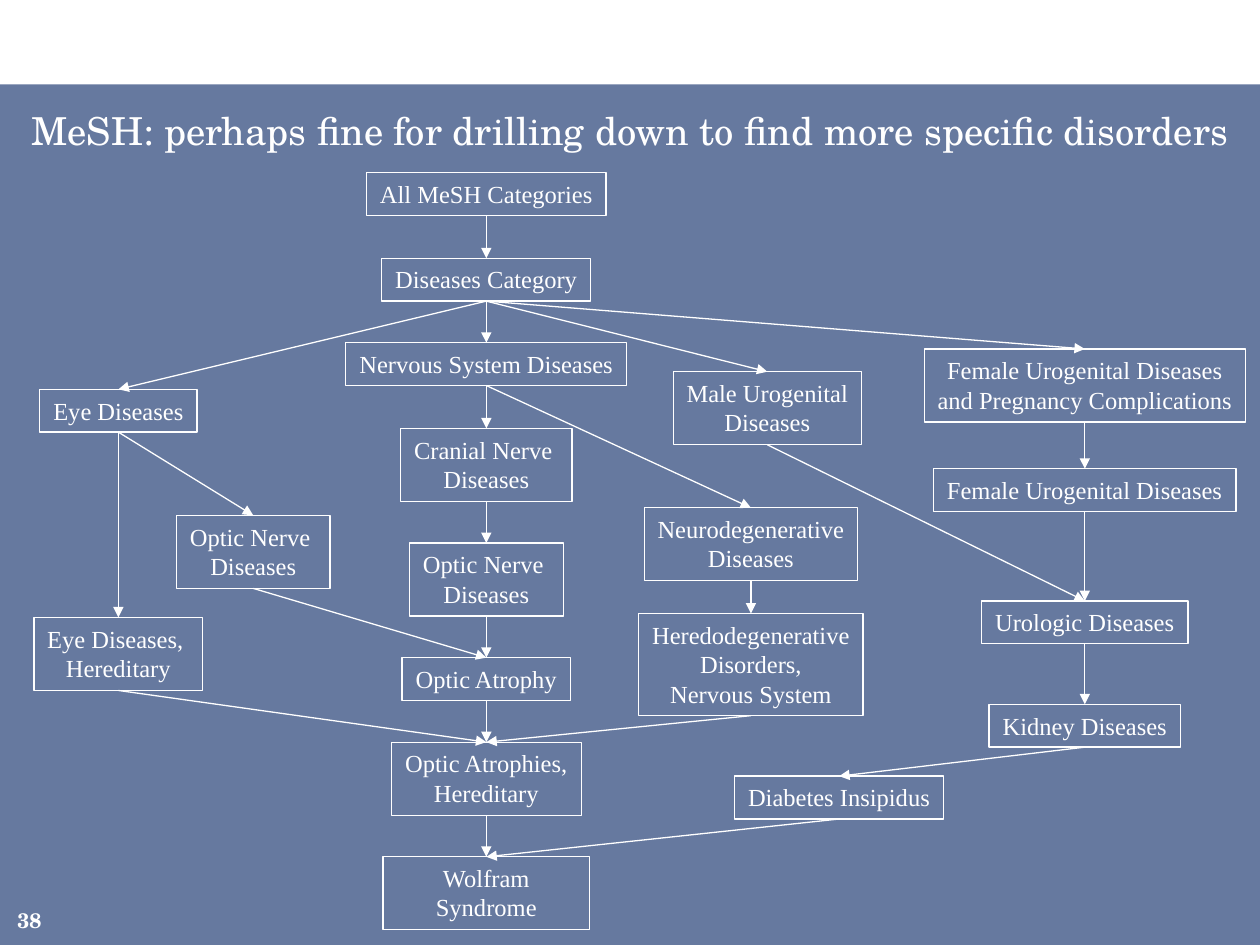
from lxml import etree
from pptx import Presentation
from pptx.dml.color import RGBColor
from pptx.enum import shapes, text
from pptx.oxml import ns
from pptx.util import Inches, Pt

WHITE = RGBColor(0xFF, 0xFF, 0xFF)
NAVY = RGBColor(0x00, 0x20, 0x60)
HEADING_FONT = "TeX Gyre Schola"
TERM_FONT = "Times New Roman"
HEIGHTS = {1: 0.34, 2: 0.58, 3: 0.81}
LEFT, OPTIC, SPINE, NEURO, MALE, INSIPIDUS, RIGHT = 0.94, 2.01, 3.86, 5.96, 6.09, 6.66, 8.61


def style(paragraph, font_name, size, align):
    paragraph.alignment = align
    paragraph.font.name = font_name
    paragraph.font.size = Pt(size)
    paragraph.font.color.rgb = WHITE


def add_child(parent, tag, **attributes):
    return etree.SubElement(parent, ns.qn(tag), attributes)


prs = Presentation()
prs.slide_width, prs.slide_height = Inches(10), Inches(7.5)
slide = prs.slides.add_slide(prs.slide_layouts[5])

backdrop = slide.shapes.add_shape(
    shapes.MSO_SHAPE.RECTANGLE, Inches(0), Inches(0.67), Inches(10), Inches(6.83))
backdrop.shadow.inherit = False
backdrop.fill.solid()
backdrop.fill.fore_color.rgb = NAVY
backdrop.line.fill.background()
add_child(backdrop._element.spPr.find(".//" + ns.qn("a:srgbClr")), "a:alpha", val="60000")
slide.shapes._spTree.insert(2, backdrop._element)

heading = slide.shapes.title
heading.left, heading.top = Inches(0), Inches(0.72)
heading.width, heading.height = Inches(10), Inches(0.62)
heading.text_frame.text = "MeSH: perhaps fine for drilling down to find more specific disorders"
heading.text_frame.auto_size = text.MSO_AUTO_SIZE.NONE
heading.text_frame.vertical_anchor = text.MSO_ANCHOR.MIDDLE
style(heading.text_frame.paragraphs[0], HEADING_FONT, 22, text.PP_ALIGN.CENTER)

# key: centre, top, width, lines
terms = {
    "all": (SPINE, 1.37, 1.9, ["All MeSH Categories"]),
    "diseases": (SPINE, 2.05, 1.66, ["Diseases Category"]),
    "nervous": (SPINE, 2.72, 2.23, ["Nervous System Diseases"]),
    "cranial": (SPINE, 3.4, 1.36, ["Cranial Nerve ", "Diseases"]),
    "cranial optic": (SPINE, 4.31, 1.22, ["Optic Nerve ", "Diseases"]),
    "atrophy": (SPINE, 5.22, 1.34, ["Optic Atrophy"]),
    "atrophies": (SPINE, 5.89, 1.51, ["Optic Atrophies,", "Hereditary"]),
    "wolfram": (SPINE, 6.8, 1.64, ["Wolfram Syndrome"]),
    "neuro": (NEURO, 4.03, 1.69, ["Neurodegenerative", "Diseases"]),
    "heredo": (NEURO, 4.87, 1.78, ["Heredodegenerative", "Disorders,", "Nervous System"]),
    "eye": (LEFT, 3.09, 1.25, ["Eye Diseases"]),
    "eye hereditary": (LEFT, 4.9, 1.34, ["Eye Diseases, ", "Hereditary"]),
    "eye optic": (OPTIC, 4.09, 1.22, ["Optic Nerve ", "Diseases"]),
    "male": (MALE, 2.95, 1.49, ["Male Urogenital", "Diseases"]),
    "pregnancy": (RIGHT, 2.77, 2.55,
                  ["Female Urogenital Diseases", "and Pregnancy Complications"]),
    "female": (RIGHT, 3.72, 2.4, ["Female Urogenital Diseases"]),
    "urologic": (RIGHT, 4.77, 1.64, ["Urologic Diseases"]),
    "kidney": (RIGHT, 5.59, 1.52, ["Kidney Diseases"]),
    "insipidus": (INSIPIDUS, 6.16, 1.66, ["Diabetes Insipidus"]),
}
nodes = {}
for key, (centre, top, width, lines) in terms.items():
    wraps = key == "wolfram"
    height = HEIGHTS[2 if wraps else len(lines)]
    node = slide.shapes.add_textbox(
        Inches(centre - width / 2), Inches(top), Inches(width), Inches(height))
    node.line.color.rgb = WHITE
    node.line.width = Pt(0.75)
    frame = node.text_frame
    frame.text = "\n".join(lines)
    frame.word_wrap = wraps
    frame.auto_size = text.MSO_AUTO_SIZE.SHAPE_TO_FIT_TEXT
    for paragraph in frame.paragraphs:
        style(paragraph, TERM_FONT, 14, text.PP_ALIGN.CENTER)
    nodes[key] = node

paths = [
    ["all", "diseases", "nervous", "cranial", "cranial optic", "atrophy", "atrophies", "wolfram"],
    ["nervous", "neuro", "heredo", "atrophies"],
    ["diseases", "eye", "eye hereditary", "atrophies"],
    ["eye", "eye optic", "atrophy"],
    ["diseases", "male", "urologic", "kidney", "insipidus", "wolfram"],
    ["diseases", "pregnancy", "female", "urologic"],
]
BOTTOM_SITE, TOP_SITE = 2, 0
for chain in paths:
    for broader, narrower in zip(chain, chain[1:]):
        arrow = slide.shapes.add_connector(shapes.MSO_CONNECTOR.STRAIGHT, 0, 0, 0, 0)
        arrow.begin_connect(nodes[broader], BOTTOM_SITE)
        arrow.end_connect(nodes[narrower], TOP_SITE)
        arrow.line.color.rgb = WHITE
        arrow.line.width = Pt(0.75)
        add_child(arrow.line._get_or_add_ln(), "a:tailEnd", type="triangle")
        add_child(arrow._element.spPr, "a:effectLst")

page_number = slide.shapes.add_textbox(Inches(0), Inches(7.08), Inches(0.33), Inches(0.32))
frame = page_number.text_frame
frame.margin_left = frame.margin_right = frame.margin_top = frame.margin_bottom = 0
frame.word_wrap = True
frame.vertical_anchor = text.MSO_ANCHOR.BOTTOM
frame.text = "38"
style(frame.paragraphs[0], HEADING_FONT, 12, text.PP_ALIGN.RIGHT)
frame.paragraphs[0].font.bold = True

prs.save("out.pptx")
